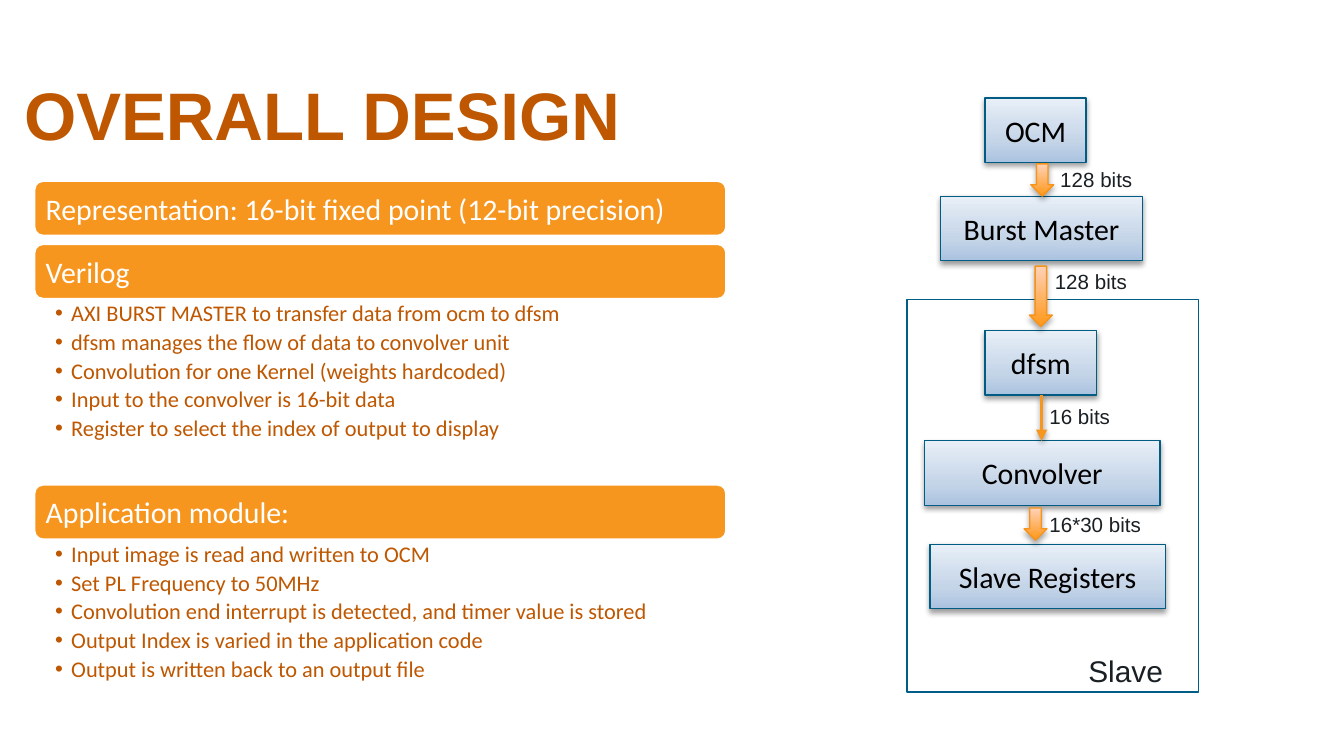
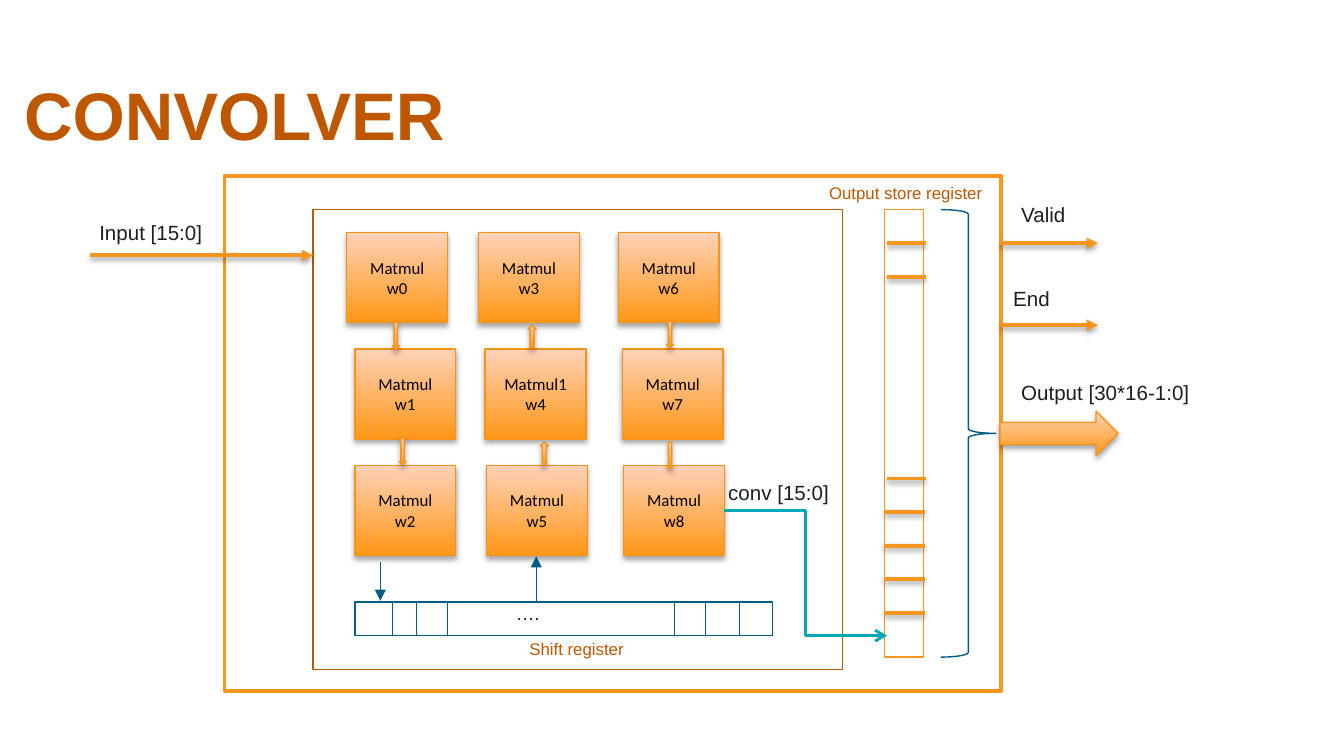
from dataclasses import dataclass

from lxml import etree
from pptx import Presentation
from pptx import util as u
from pptx.dml.color import RGBColor
from pptx.enum import shapes, text
from pptx.oxml.ns import qn

WIDTH, HEIGHT = u.Inches(10), u.Inches(5.625)
COLUMNS, ROWS = 100, 56.25

RUST, ORANGE, NAVY, TEAL = "BE5700", "F7961F", "005C83", "00A8B6"
INK, BLACK, WHITE = "1A1F24", "000000", "FFFFFF"
MSO, ALIGN, ANCHOR = shapes.MSO_SHAPE, text.PP_ALIGN, text.MSO_ANCHOR


@dataclass(frozen=True)
class Shadow:
    alpha: int
    distance: float


@dataclass(frozen=True)
class Look:
    line: str
    width: float = 0.75
    fill: str | None = None
    stops: tuple[tuple[int, str], ...] = ()
    shadow: Shadow | None = None


@dataclass(frozen=True)
class Block:
    left: float
    top: float
    width: float
    height: float
    look: Look
    kind: MSO = MSO.FLOWCHART_PROCESS
    words: str = ""
    size: float = 16


@dataclass(frozen=True)
class Label:
    left: float
    top: float
    width: float
    height: float
    words: str
    size: float = 11
    color: str = INK


@dataclass(frozen=True)
class Line:
    x1: float
    y1: float
    x2: float
    y2: float
    look: Look
    head: str = ""
    kind: shapes.MSO_CONNECTOR = shapes.MSO_CONNECTOR.STRAIGHT


@dataclass(frozen=True)
class Section:
    top: float
    heading: str
    items: tuple[str, ...] = ()
    height: float = 0


SOFT = Shadow(38, 1.6)
BLUE = Look(NAVY, stops=((0, "ABC3E0"), (35, "C5D5E8"), (100, "E8EFF7")), shadow=SOFT)
AMBER = Look("F79319", stops=((0, "FF9717"), (100, "FFD2B9")), shadow=Shadow(35, 1.8))
BAR = Look(WHITE, 2, fill=ORANGE)
THIN = Look(NAVY)
FRAME = Look("005E86")
BOLD = Look(ORANGE, 2, shadow=SOFT)

SECTIONS = (
    Section(13.4, "Representation: 16-bit fixed point (12-bit precision)"),
    Section(18.1, "Verilog", (
        "AXI BURST MASTER to transfer data from ocm to dfsm",
        "dfsm manages the flow of data to convolver unit",
        "Convolution for one Kernel (weights hardcoded)",
        "Input to the convolver is 16-bit data",
        "Register to select the index of output to display"), 13.8),
    Section(36, "Application module:", (
        "Input image is read and written to OCM",
        "Set PL Frequency to 50MHz",
        "Convolution end interrupt is detected, and timer value is stored",
        "Output Index is varied in the application code",
        "Output is written back to an output file"), 11.4),
)

PIPELINE = (
    Block(73.3, 7.3, 7.5, 4.8, BLUE, words="OCM"),
    Block(70, 14.6, 15, 4.8, BLUE, words="Burst Master"),
    Block(73.3, 24.6, 8.3, 4.8, BLUE, words="dfsm"),
    Block(68.8, 32.8, 17.5, 4.8, BLUE, words="Convolver"),
    Block(69.2, 40.5, 17.5, 4.8, BLUE, words="Slave Registers"),
    Block(67.5, 22.3, 21.7, 29.2, FRAME, MSO.RECTANGLE),
    Label(80, 48.1, 10, 3.7, "Slave", 16),
    Block(76.7, 12.2, 1.7, 2.4, AMBER, MSO.DOWN_ARROW),
    Block(76.6, 19.8, 1.7, 4.5, AMBER, MSO.DOWN_ARROW),
    Block(76.2, 37.8, 1.7, 2.4, AMBER, MSO.DOWN_ARROW),
    Line(77.5, 29.4, 77.5, 32.8, BOLD, "triangle"),
    Label(77.9, 11.9, 7.5, 2.9, "128 bits"),
    Label(77.5, 19.5, 7.5, 2.9, "128 bits"),
    Label(77.1, 29.6, 7.5, 2.9, "16 bits"),
    Label(77.1, 37.6, 11.2, 2.9, "16*30 bits"),
)

MATMUL_LEFTS = ((25.8, 26.4, 26.4), (35.6, 36.1, 36.2), (46, 46.3, 46.4))
MATMULS = tuple(
    Block(left, 17.3 + 8.66 * row, 7.5, 6.7, AMBER, size=9,
          words=f"Matmul{'1' if 3 * col + row == 4 else ''} w{3 * col + row}")
    for col, lefts in enumerate(MATMUL_LEFTS)
    for row, left in enumerate(lefts))

CONVOLVER = (
    Block(16.7, 13.1, 57.8, 38.3, Look(ORANGE, 2, fill=WHITE)),
    Block(23.3, 15.6, 39.4, 34.2, Look(RUST)),
    *MATMULS,
    Block(26.4, 44.8, 31.1, 2.5, FRAME),
    *(Line(x, 44.7, x, 47.3, THIN) for x in (29.2, 31, 33.3, 50.2, 52.5, 55)),
    Label(37.4, 44.3, 14.2, 2.7, "….", 10),
    Line(6.7, 19, 23.3, 19, BOLD, "triangle"),
    Line(28.3, 41.8, 28.3, 44.7, THIN, "triangle"),
    *(Block(x, y, 0.5, 2, AMBER, MSO.DOWN_ARROW)
      for x, y in ((29.2, 24), (29.7, 32.6), (49.6, 23.9), (49.6, 32.9))),
    *(Block(x, y, 0.6, 1.7, AMBER, MSO.UP_ARROW)
      for x, y in ((40.2, 32.9), (39.3, 24.2))),
    Line(39.9, 44.7, 39.9, 41.4, THIN, "triangle"),
    Block(65.8, 15.6, 2.9, 33.3, Look(ORANGE)),
    *(Line(65.8, 38.1 + 2.5 * i, 68.8, 38.1 + 2.5 * i, BOLD) for i in range(4)),
    *(Line(66, y, 68.9, y, BOLD) for y in (18.1, 20.6, 35.6)),
    Line(53.9, 38, 66, 47.3, Look(TEAL, 1.5), "arrow", shapes.MSO_CONNECTOR.ELBOW),
    Label(38.4, 47, 16.5, 2.5, "Shift register", 9, RUST),
    Label(60.7, 13.1, 16.5, 2.5, "Output store register", 9, RUST),
    Block(70, 15.6, 4.1, 33.3, THIN, MSO.RIGHT_BRACE),
    Block(74.4, 30.6, 8.8, 3.3, AMBER, MSO.RIGHT_ARROW),
    *(Line(74.4, y, 81.7, y, BOLD, "triangle") for y in (24.2, 18.1)),
    Label(6.4, 15.9, 11.2, 2.9, "Input [15:0]"),
    Label(75, 27.8, 14.6, 2.9, "Output [30*16-1:0]"),
    Label(53.2, 35.2, 14.6, 2.9, "conv [15:0]"),
    Label(74.4, 20.8, 14.6, 2.9, "End"),
    Label(75, 14.5, 14.6, 2.9, "Valid"),
)


def rgb(color: str) -> RGBColor:
    return RGBColor.from_string(color)


def col(count: float) -> int:
    return round(count * WIDTH / COLUMNS)


def row(count: float) -> int:
    return round(count * HEIGHT / ROWS)


def area(left: float, top: float, width: float, height: float) -> tuple[int, ...]:
    return col(left), row(top), col(width), row(height)


def place(sp, left: float, top: float, width: float, height: float) -> None:
    sp.left, sp.top, sp.width, sp.height = area(left, top, width, height)


def node(parent, tag: str, **attrs):
    return etree.SubElement(parent, qn(tag), {k: str(v) for k, v in attrs.items()})


def set_font(p, name: str, size: float, color: str, bold: bool = False) -> None:
    p.font.name, p.font.size, p.font.bold = name, u.Pt(size), bold
    p.font.color.rgb = rgb(color)


def set_insets(tf, left: float, top: float, right: float, bottom: float) -> None:
    tf.margin_left, tf.margin_right = u.Inches(left), u.Inches(right)
    tf.margin_top, tf.margin_bottom = u.Inches(top), u.Inches(bottom)


def set_fill(sp, look: Look) -> None:
    if look.stops:
        sp.fill.gradient()
        sp.fill.gradient_angle = 90
        stops = sp._element.spPr.find(qn("a:gradFill")).find(qn("a:gsLst"))
        stops.clear()
        for share, color in look.stops:
            node(node(stops, "a:gs", pos=share * 1000), "a:srgbClr", val=color)
    elif look.fill:
        sp.fill.solid()
        sp.fill.fore_color.rgb = rgb(look.fill)
    else:
        sp.fill.background()


def set_outline(sp, look: Look) -> None:
    sp.line.color.rgb = rgb(look.line)
    sp.line.width = u.Pt(look.width)
    effects = node(sp._element.spPr, "a:effectLst")
    if look.shadow:
        outer = node(effects, "a:outerShdw", blurRad=u.Pt(3.1),
                     dist=u.Pt(look.shadow.distance), dir=5400000, rotWithShape=0)
        color = node(outer, "a:srgbClr", val=BLACK)
        node(color, "a:alpha", val=look.shadow.alpha * 1000)


def draw_block(s, block: Block):
    sp = s.shapes.add_shape(
        block.kind, *area(block.left, block.top, block.width, block.height))
    set_fill(sp, block.look)
    set_outline(sp, block.look)
    if block.words:
        tf = sp.text_frame
        tf.word_wrap, tf.vertical_anchor = True, ANCHOR.MIDDLE
        p = tf.paragraphs[0]
        p.text, p.alignment = block.words, ALIGN.CENTER
        set_font(p, "Calibri", block.size, BLACK)
    return sp


def draw_label(s, label: Label) -> None:
    tf = s.shapes.add_textbox(
        *area(label.left, label.top, label.width, label.height)).text_frame
    tf.word_wrap, tf.auto_size = True, text.MSO_AUTO_SIZE.SHAPE_TO_FIT_TEXT
    p = tf.paragraphs[0]
    p.text = label.words
    set_font(p, "Arial", label.size, label.color)


def draw_line(s, line: Line) -> None:
    c = s.shapes.add_connector(
        line.kind, col(line.x1), row(line.y1), col(line.x2), row(line.y2))
    set_outline(c, line.look)
    if line.head:
        node(c._element.spPr.find(qn("a:ln")), "a:tailEnd", type=line.head)


def draw_section(s, section: Section) -> None:
    sp = draw_block(s, Block(2.5, section.top, 51.6, 4.2, BAR,
                             MSO.ROUNDED_RECTANGLE, section.heading))
    set_insets(sp.text_frame, 0.07, 0.07, 0.07, 0.07)
    p = sp.text_frame.paragraphs[0]
    p.alignment = ALIGN.LEFT
    set_font(p, "Calibri", 16, WHITE)


def fill_list(body, section: Section) -> None:
    place(body, 2.5, section.top + 4.2, 51.6, section.height)
    tf = body.text_frame
    tf.word_wrap, tf.auto_size = True, text.MSO_AUTO_SIZE.NONE
    tf.vertical_anchor = ANCHOR.TOP
    set_insets(tf, 0.16, 0.02, 0.12, 0.02)
    tf.text = "\n".join(section.items)
    for p in tf.paragraphs:
        p.level = 1
        pPr = p._p.get_or_add_pPr()
        pPr.set("marL", str(u.Inches(0.12)))
        pPr.set("indent", str(-u.Inches(0.12)))
        node(pPr, "a:buChar", char="•")
        p.line_spacing, p.space_before, p.space_after = 0.9, u.Pt(0), u.Pt(2.4)
        set_font(p, "Calibri", 12, RUST)


def add_slide(prs, layout: int, title: str, parts: tuple):
    s = prs.slides.add_slide(prs.slide_layouts[layout])
    place(s.shapes.title, 0.8, 4.8, 81.7, 7.3)
    tf = s.shapes.title.text_frame
    tf.auto_size, tf.vertical_anchor = text.MSO_AUTO_SIZE.NONE, ANCHOR.MIDDLE
    p = tf.paragraphs[0]
    p.text, p.alignment = title, ALIGN.LEFT
    set_font(p, "Arial", 36, RUST, bold=True)
    draw = {Block: draw_block, Label: draw_label, Line: draw_line}
    for part in parts:
        draw[type(part)](s, part)
    return s


def main() -> None:
    prs = Presentation()
    prs.slide_width, prs.slide_height = WIDTH, HEIGHT
    s = add_slide(prs, 3, "OVERALL DESIGN", PIPELINE)
    for section in SECTIONS:
        draw_section(s, section)
    bodies = [ph for ph in s.placeholders if ph.placeholder_format.idx]
    for body, section in zip(bodies, (x for x in SECTIONS if x.items)):
        fill_list(body, section)
    add_slide(prs, 5, "CONVOLVER", CONVOLVER)
    prs.save("out.pptx")


if __name__ == "__main__":
    main()
